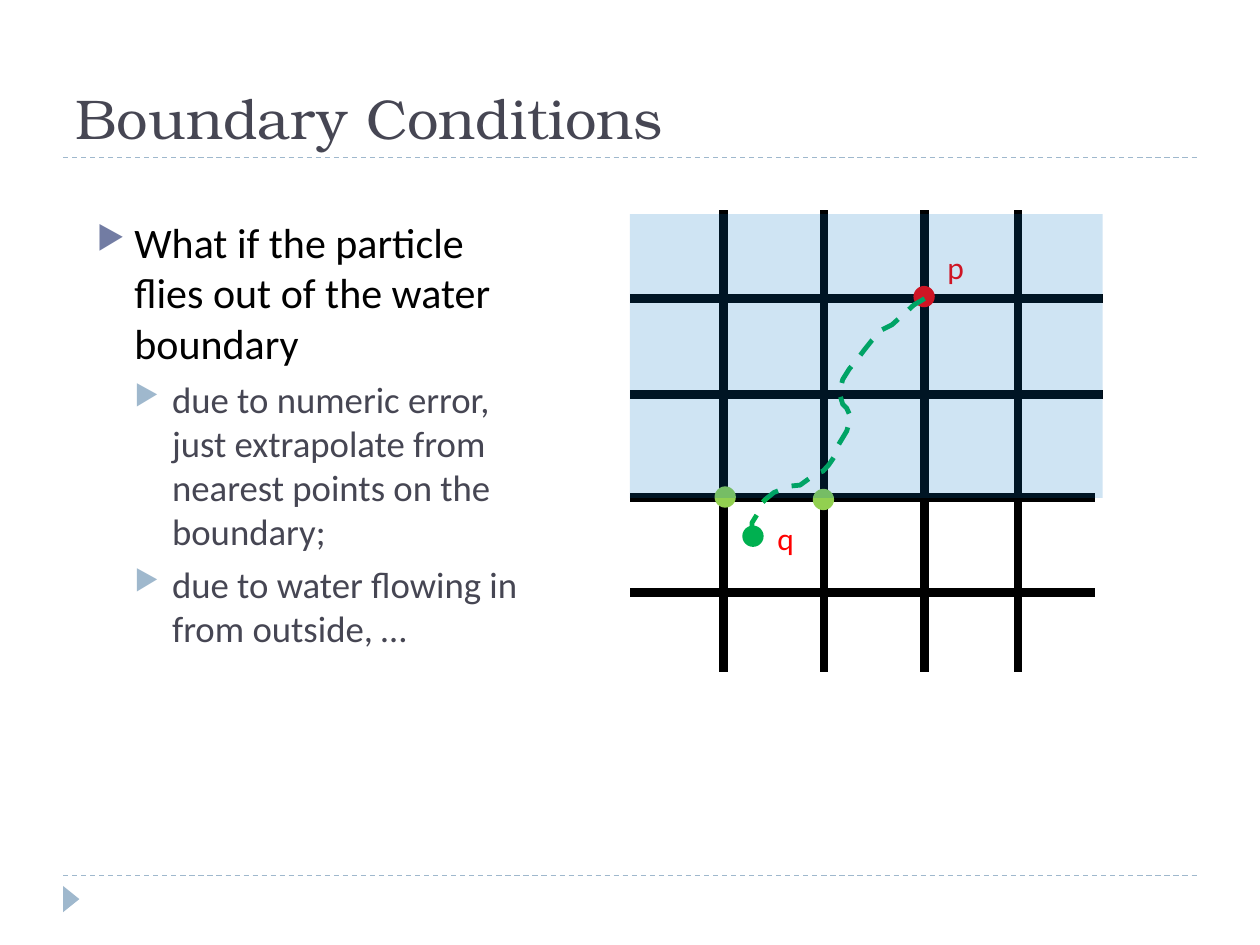
from lxml import etree
from pptx import Presentation
from pptx.dml.color import RGBColor
from pptx.enum import dml, shapes, text
from pptx.oxml.ns import qn
from pptx.util import Cm, Pt

COLORS = {
    "title": "464653", "body": "000000", "bullet": "727CA3", "accent": "9FB8CD",
    "grid": "000000", "label": "FF0000", "path": "00B050", "boundary": "92D050",
    "water": "0070C0",
}

# Content; lengths in cm
TITLE = "Boundary Conditions"
POINTS = [
    (0, "What if the particle flies out of the water boundary"),
    (1, "due to numeric error, just extrapolate from nearest points on the boundary;"),
    (1, "due to water flowing in from outside, …"),
]
LEVELS = [  # size, text colour, bullet colour, space before
    (24, "body", "bullet", 6),
    (21, "title", "accent", 5),
]
RULE_YS = [3.18, 17.65]
GRID_LEFT, GRID_TOP, GRID_BOTTOM = 12.7, 4.24, 13.54
ROWS = [(6.02, 22.23), (7.95, 22.23), (10.03, 22.07), (11.94, 22.07)]  # y, right end
COLUMN_XS = [14.58, 16.61, 18.64, 20.52]
DOT = 0.43
START_DOT = (18.63, 5.98, "label")
LOWER_DOTS = [
    (15.18, 10.81, "path"), (14.62, 10.02, "boundary"), (16.6, 10.07, "boundary"),
]
LABELS = [("p", 18.85, 4.88), ("q", 15.42, 10.34)]
TRAJECTORY = [
    (18.64, 6.02), (18.42, 6.15), (18.29, 6.27), (17.98, 6.55), (17.78, 6.65),
    (17.68, 6.76), (17.58, 6.86), (17.42, 7.06), (17.27, 7.26), (17.12, 7.44),
    (16.99, 7.65), (16.92, 7.92), (16.99, 8.15), (17.07, 8.23), (17.15, 8.41),
    (17.07, 8.69), (16.89, 8.99), (16.81, 9.22), (16.71, 9.37), (16.59, 9.5),
    (16.43, 9.55), (16.31, 9.65), (16.13, 9.78), (15.93, 9.8), (15.6, 9.93),
    (15.44, 10.06), (15.34, 10.16), (15.27, 10.36), (15.16, 10.54),
    (15.16, 10.95), (15.09, 10.9),
]

prs = Presentation()
prs.slide_width, prs.slide_height = Cm(25.4), Cm(19.05)
slide = prs.slides.add_slide(prs.slide_layouts[6])


def rgb(name):
    return RGBColor.from_string(COLORS[name])


def add_line(x1, y1, x2, y2, color, width, dash=None):
    line = slide.shapes.add_connector(
        shapes.MSO_CONNECTOR.STRAIGHT, Cm(x1), Cm(y1), Cm(x2), Cm(y2))
    line.line.color.rgb = rgb(color)
    line.line.width = Pt(width)
    if dash:
        line.line.dash_style = dash
    etree.SubElement(line._element.spPr, qn("a:effectLst"))


def add_filled(kind, left, top, width, height, color):
    shape = slide.shapes.add_shape(kind, Cm(left), Cm(top), Cm(width), Cm(height))
    shape.shadow.inherit = False
    shape.fill.solid()
    shape.fill.fore_color.rgb = rgb(color)
    shape.line.fill.background()
    return shape


def add_dot(x, y, color):
    add_filled(shapes.MSO_SHAPE.OVAL, x - DOT / 2, y - DOT / 2, DOT, DOT, color)


def add_text(left, top, width, height):
    frame = slide.shapes.add_textbox(Cm(left), Cm(top), Cm(width), Cm(height)).text_frame
    frame.word_wrap = True
    return frame


def style(paragraph, font, size, color):
    paragraph.font.name = font
    paragraph.font.size = Pt(size)
    paragraph.font.color.rgb = rgb(color)


def add_bullet(paragraph, level, color):
    props = paragraph._p.get_or_add_pPr()
    props.set("marL", str(Cm(0.76 * (level + 1))))
    props.set("indent", str(-Cm(0.76)))
    bullet_color = etree.SubElement(props, qn("a:buClr"))
    etree.SubElement(bullet_color, qn("a:srgbClr"), val=COLORS[color])
    etree.SubElement(props, qn("a:buSzPct"), val="76000")
    etree.SubElement(props, qn("a:buChar"), char="▶")


# Page rules and corner marker
for y in RULE_YS:
    add_line(1.27, y, 24.13, y, "accent", 0.75, dml.MSO_LINE.DASH)
marker = add_filled(shapes.MSO_SHAPE.ISOSCELES_TRIANGLE, 1.17, 17.96, 0.53, 0.33, "accent")
marker.rotation = 90

# Title
title = add_text(1.27, 0.43, 22.86, 2.74)
title.vertical_anchor = text.MSO_ANCHOR.BOTTOM
title.text = TITLE
style(title.paragraphs[0], "TeX Gyre Bonum", 32, "title")

# Bulleted points
body = add_text(1.7, 4.24, 9.32, 11.86)
for index, (level, words) in enumerate(POINTS):
    point = body.paragraphs[0] if index == 0 else body.add_paragraph()
    size, color, bullet, space = LEVELS[level]
    point.text = words
    point.level = level
    point.space_before = Pt(space)
    add_bullet(point, level, bullet)
    style(point, "Calibri", size, color)

# Grid
for y, right in ROWS:
    add_line(GRID_LEFT, y, right, y, "grid", 5)
for x in COLUMN_XS:
    add_line(x, GRID_BOTTOM, x, GRID_TOP, "grid", 5)

# Particle path from p to q, with the boundary points nearest to q
add_dot(*START_DOT)
corners = [(Cm(x), Cm(y)) for x, y in TRAJECTORY]
builder = slide.shapes.build_freeform(*corners[0])
builder.add_line_segments(corners[1:], close=False)
trajectory = builder.convert_to_shape()
trajectory.shadow.inherit = False
trajectory.fill.background()
trajectory.line.color.rgb = rgb("path")
trajectory.line.width = Pt(2.75)
trajectory.line.dash_style = dml.MSO_LINE.DASH
for dot in LOWER_DOTS:
    add_dot(*dot)

# Particle labels
for name, left, top in LABELS:
    label = add_text(left, top, 1.07, 1.02)
    label.text = name
    style(label.paragraphs[0], "Calibri", 18, "label")

# Translucent water over the upper rows
water = add_filled(shapes.MSO_SHAPE.RECTANGLE, GRID_LEFT, 4.32, 9.53, 5.72, "water")
water_color = water._element.spPr.find(qn("a:solidFill")).find(qn("a:srgbClr"))
etree.SubElement(water_color, qn("a:alpha"), val="19000")

prs.save("out.pptx")
